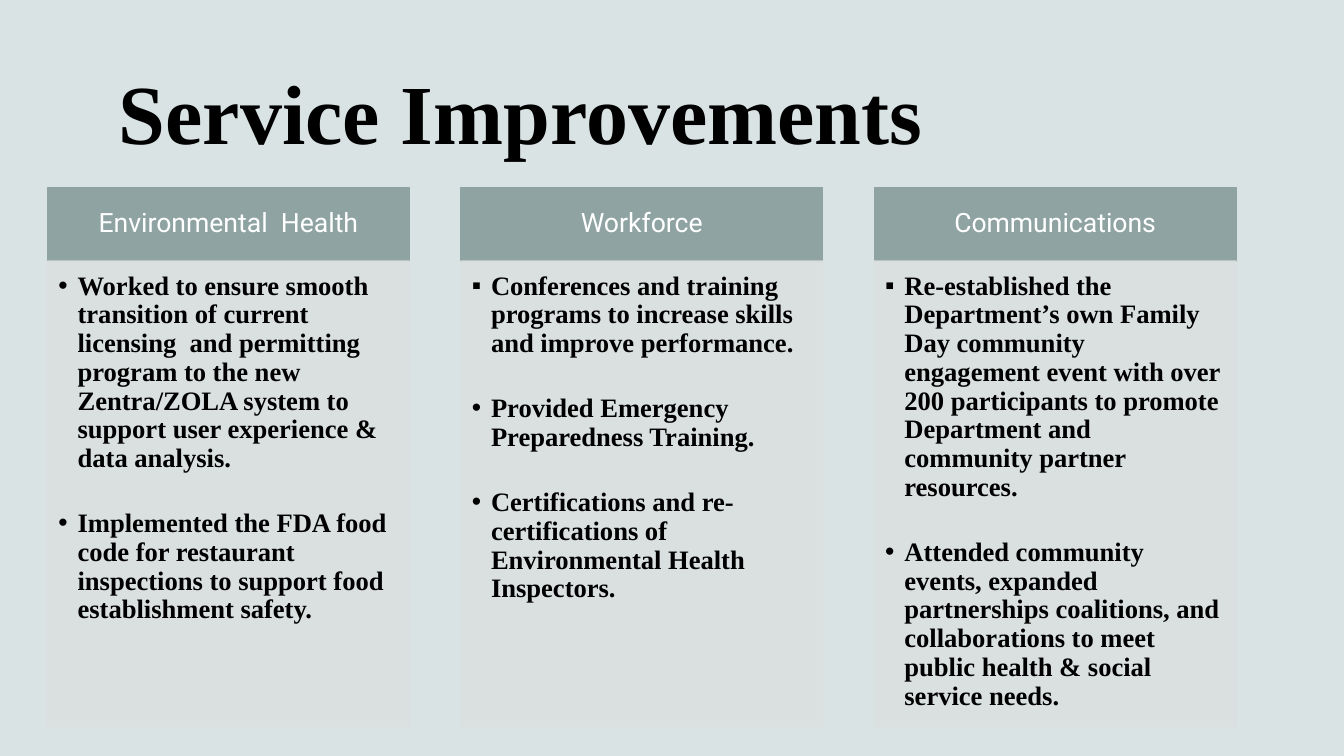
import pptx
import pptx.dml.color
import pptx.enum.shapes
import pptx.enum.text
import pptx.oxml.ns
import pptx.util
from lxml import etree

EMU_PER_PX = 9144  # 100 px to the inch
SERIF, SANS = "Times New Roman", "Roboto"
ALIGN = pptx.enum.text.PP_ALIGN
ANCHOR = pptx.enum.text.MSO_ANCHOR

COLUMN_LEFT, COLUMN_PITCH, COLUMN_WIDTH = 47, 410, 359
HEADING_TOP, HEADING_HEIGHT, PANEL_HEIGHT = 186, 73, 462
HANGING_INDENT = 19

# Heading, then (bullet, text) pairs
COLUMNS = [
    ("Environmental  Health", [
        ("•", "Worked to ensure smooth transition of current licensing  and "
              "permitting program to the new Zentra/ZOLA system to support "
              "user experience & data analysis."),
        ("•", "Implemented the FDA food code for restaurant inspections to "
              "support food establishment safety."),
    ]),
    ("Workforce", [
        ("▪", "Conferences and training programs to increase skills and "
              "improve performance."),
        ("•", "Provided Emergency Preparedness Training."),
        ("•", "Certifications and re-certifications of Environmental Health "
              "Inspectors."),
    ]),
    ("Communications", [
        ("▪", "Re-established the Department’s own Family Day community "
              "engagement event with over 200 participants to promote "
              "Department and community partner resources."),
        ("•", "Attended community events, expanded partnerships coalitions, "
              "and collaborations to meet public health & social service "
              "needs."),
    ]),
]


def px(length):
    return pptx.util.Emu(length * EMU_PER_PX)


def rgb(color):
    return pptx.dml.color.RGBColor.from_string(color)


def apply(target, values):
    for name, value in values.items():
        setattr(target, name, value)


def set_frame(frame, anchor, insets):
    sides = ("margin_left", "margin_top", "margin_right", "margin_bottom")
    apply(frame, {"word_wrap": True, "vertical_anchor": anchor,
                  "auto_size": pptx.enum.text.MSO_AUTO_SIZE.NONE})
    apply(frame, dict(zip(sides, map(px, insets))))


def write(paragraph, text, size, font, color, bold, align):
    apply(paragraph, {"alignment": align, "line_spacing": 0.9})
    run = paragraph.add_run()
    run.text = text
    apply(run.font, {"size": pptx.util.Pt(size), "name": font, "bold": bold})
    run.font.color.rgb = rgb(color)


def add_box(slide, left, top, height, color, opacity=100):
    box = slide.shapes.add_shape(
        pptx.enum.shapes.MSO_SHAPE.RECTANGLE,
        px(left), px(top), px(COLUMN_WIDTH), px(height))
    box.shadow.inherit = False
    box.fill.solid()
    box.fill.fore_color.rgb = rgb(color)
    box.line.color.rgb = rgb(color)
    box.line.width = pptx.util.Pt(0.85)
    if opacity < 100:
        tag = pptx.oxml.ns.qn("a:srgbClr")
        for shade in box.fill._xPr.iter(tag):
            etree.SubElement(shade, pptx.oxml.ns.qn("a:alpha"),
                             val=str(opacity * 1000))
    return box


def add_bullet(paragraph, mark):
    properties = paragraph._p.get_or_add_pPr()
    properties.set("marL", str(px(HANGING_INDENT)))
    properties.set("indent", str(-px(HANGING_INDENT)))
    etree.SubElement(properties, pptx.oxml.ns.qn("a:buFont"), typeface="Arial")
    etree.SubElement(properties, pptx.oxml.ns.qn("a:buChar"), char=mark)


def add_heading(slide, left, text):
    heading = add_box(slide, left, HEADING_TOP, HEADING_HEIGHT, "8FA3A3")
    set_frame(heading.text_frame, ANCHOR.MIDDLE, (15, 8, 15, 8))
    write(heading.text_frame.paragraphs[0], text, 19, SANS, "FFFFFF", False,
          ALIGN.CENTER)


def add_panel(slide, left, items):
    panel = add_box(slide, left, HEADING_TOP + HEADING_HEIGHT, PANEL_HEIGHT,
                    "DBE0E0", opacity=90)
    frame = panel.text_frame
    set_frame(frame, ANCHOR.TOP, (11, 11, 15, 17))
    for index, (mark, text) in enumerate(items):
        paragraph = frame.add_paragraph() if index else frame.paragraphs[0]
        write(paragraph, text, 19, SERIF, "000000", True, ALIGN.LEFT)
        paragraph.space_before = pptx.util.Pt(26 if index else 0)
        add_bullet(paragraph, mark)


def set_title(slide, text):
    title = slide.shapes.title
    apply(title, {"left": px(108), "top": px(43),
                  "width": px(1117), "height": px(122)})
    set_frame(title.text_frame, ANCHOR.BOTTOM, (10, 4, 10, 4))
    write(title.text_frame.paragraphs[0], text, 60, SERIF, "000000", True,
          ALIGN.LEFT)


def main():
    deck = pptx.Presentation()
    apply(deck, {"slide_width": px(1333), "slide_height": px(750)})
    slide = deck.slides.add_slide(deck.slide_layouts.get_by_name("Title Only"))

    # Background and title
    slide.background.fill.solid()
    slide.background.fill.fore_color.rgb = rgb("DAE3E3")
    set_title(slide, "Service Improvements")

    # Three columns: heading above its list
    for index, (heading, items) in enumerate(COLUMNS):
        left = COLUMN_LEFT + index * COLUMN_PITCH
        add_heading(slide, left, heading)
        add_panel(slide, left, items)

    deck.save("out.pptx")


if __name__ == "__main__":
    main()
